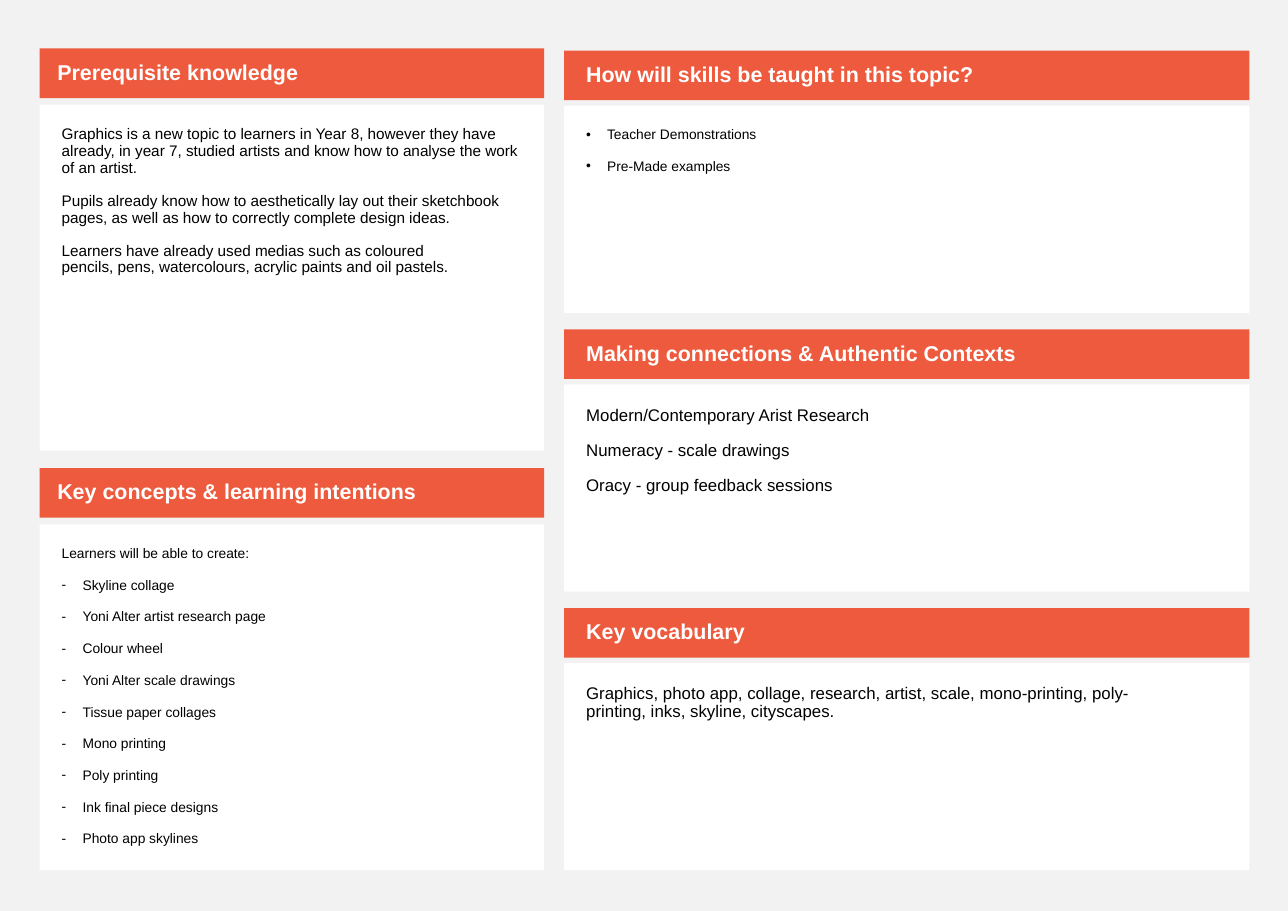
from lxml.etree import SubElement
from pptx import Presentation
from pptx.dml.color import RGBColor
from pptx.enum.shapes import MSO_SHAPE
from pptx.enum.text import MSO_ANCHOR, MSO_AUTO_SIZE, PP_ALIGN
from pptx.oxml.ns import qn
from pptx.util import Inches, Pt


def paint(fill, color):
    fill.solid()
    fill.fore_color.rgb = RGBColor.from_string(color)


def fill_box(holder, box, color, insets, anchor, lines, size, ink, bold):
    shape = holder or slide.shapes.add_shape(MSO_SHAPE.RECTANGLE, 0, 0, 0, 0)
    shape.left, shape.top, shape.width, shape.height = [Inches(n) for n in box]
    paint(shape.fill, color)
    shape.line.fill.background()
    if holder is None:
        shape.shadow.inherit = False
    frame = shape.text_frame
    frame.word_wrap = True
    frame.auto_size = MSO_AUTO_SIZE.NONE
    frame.vertical_anchor = anchor
    (frame.margin_left, frame.margin_top,
     frame.margin_right, frame.margin_bottom) = [Inches(n) for n in insets]
    for number, (bullet, text) in enumerate(lines):
        paragraph = frame.add_paragraph() if number else frame.paragraphs[0]
        paragraph.alignment = PP_ALIGN.LEFT
        paragraph.line_spacing = 0.9
        paragraph.space_before = Pt(11)
        paragraph.space_after = Pt(0)
        properties = paragraph._p.get_or_add_pPr()
        indent = Inches(0.19) if bullet else 0
        properties.set("marL", str(indent))
        properties.set("indent", str(-indent))
        if bullet:
            SubElement(properties, qn("a:buFont"), typeface="Arial")
            SubElement(properties, qn("a:buChar"), char=bullet)
        else:
            SubElement(properties, qn("a:buNone"))
        run = paragraph.add_run()
        run.text = text
        run.font.name = "Arial"
        run.font.size = Pt(size)
        run.font.bold = bold
        paint(run.font.fill, ink)
    return frame


tie = chr(160)
prerequisites = [
    ("", "Graphics is a new topic to learners in Year 8, however they have already, in year 7, "
         "studied artists and know how to analyse the work of an artist."),
    ("", "Pupils already know how to aesthetically lay out their sketchbook pages, "
         "as well as how to correctly complete design ideas."),
    ("", "Learners have already used medias such as coloured "
         f"pencils,{tie}pens,{tie}watercolours, acrylic paints and oil pastels."),
]
creations = [
    "Skyline collage", "Yoni Alter artist research page", "Colour wheel",
    "Yoni Alter scale drawings", "Tissue paper collages", "Mono printing",
    "Poly printing", "Ink final piece designs", "Photo app skylines",
]
concepts = [("", "Learners will be able to create:")] + [("-", item) for item in creations]
skills = [("•", "Teacher Demonstrations"), ("•", "Pre-Made examples")]
connections = [
    ("", "Modern/Contemporary Arist Research"),
    ("", "Numeracy - scale drawings"),
    ("", "Oracy - group feedback sessions"),
]
vocabulary = [
    ("", "Graphics, photo app, collage, research, artist, scale, "
         f"mono-printing,{tie}poly-printing,{tie}inks, skyline, cityscapes."),
]

columns = [
    (0.36, 4.58, 0.44, 3.81, 0.51, 3.14, 0.16, [
        ("Prerequisite knowledge", prerequisites, 10, 1),
        ("Key concepts & learning intentions", concepts, 9, 1),
    ]),
    (5.12, 6.22, 0.46, 2.53, 0.5, 1.88, 0.2, [
        ("How will skills be taught in this topic?", skills, 9, 2),
        ("Making connections & Authentic Contexts", connections, 11, 1),
        ("Key vocabulary", vocabulary, 11, 1),
    ]),
]

deck = Presentation()
deck.slide_width, deck.slide_height = Inches(11.69), Inches(8.27)
slide = deck.slides.add_slide(deck.slide_layouts.get_by_name("Comparison"))
paint(slide.background.fill, "F2F2F2")
heading_holders = [slide.shapes.title]
list_holders = [holder for holder in slide.placeholders
                if holder.placeholder_format.idx in range(1, 5)]

for left, width, first_top, step, drop, list_height, heading_inset, sections in columns:
    for row, (heading, lines, size, text_columns) in enumerate(sections):
        top = first_top + row * step
        fill_box(heading_holders.pop(0) if heading_holders else None,
                 (left, top, width, 0.45), "ED5A3E", (heading_inset, 0.05, 0.1, 0.05),
                 MSO_ANCHOR.MIDDLE, [("", heading)], 14, "FFFFFF", True)
        list_frame = fill_box(list_holders.pop(0) if list_holders else None,
                              (left, top + drop, width, list_height), "FFFFFF", (0.2,) * 4,
                              MSO_ANCHOR.TOP, lines, size, "000000", False)
        list_frame._txBody.bodyPr.set("numCol", str(text_columns))

deck.save("out.pptx")
